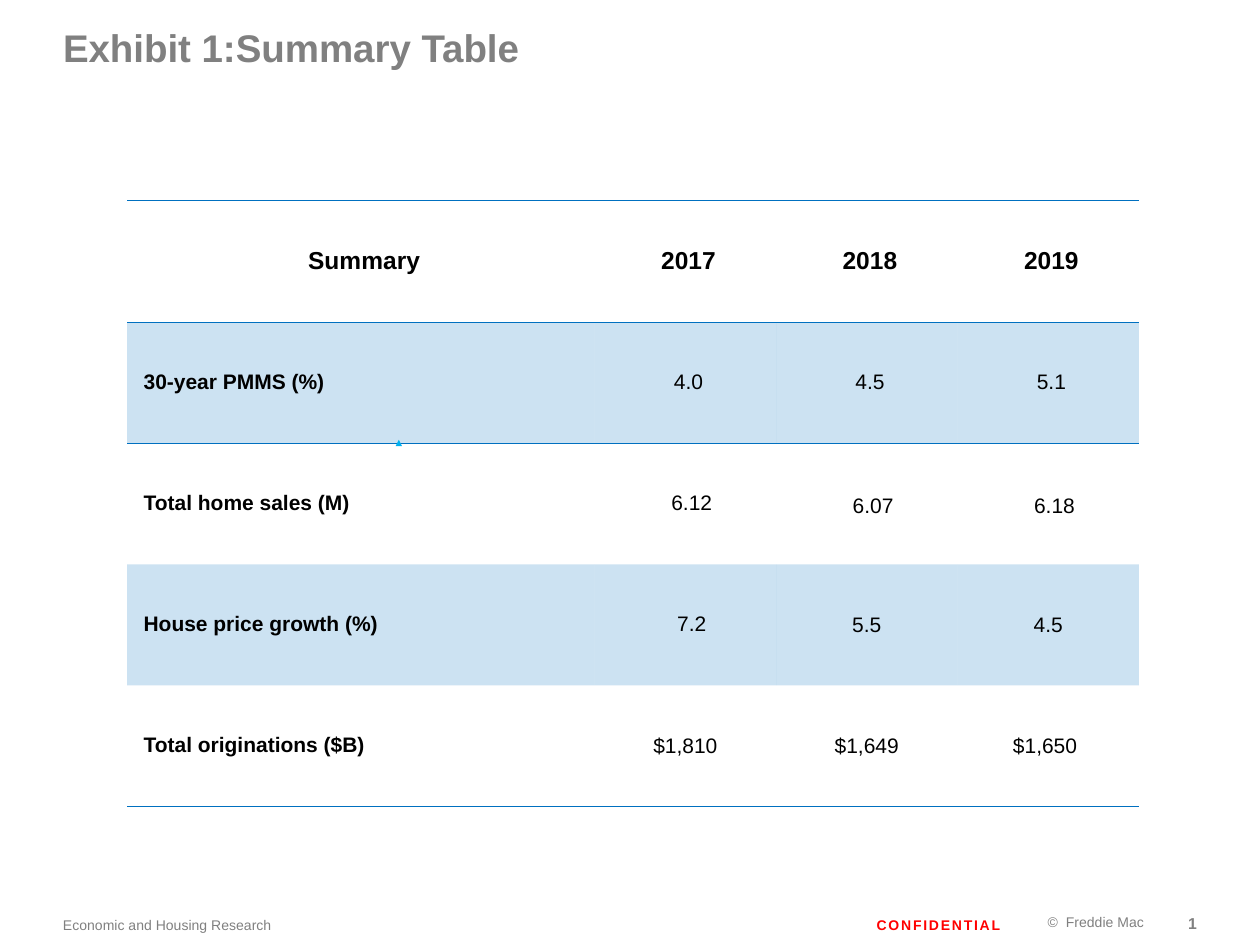
from lxml import etree
from pptx import Presentation
from pptx import util as u
from pptx.dml.color import RGBColor
from pptx.enum import shapes, text
from pptx.oxml import ns

# Content
TITLE = "Exhibit 1:Summary Table"
HEAD = ["Summary", "2017", "2018", "2019"]
ROWS = [
    ["30-year PMMS (%)", "4.0", "4.5", "5.1"],
    ["Total home sales (M)", "6.12", "6.07", "6.18"],
    ["House price growth (%)", "7.2", "5.5", "4.5"],
    ["Total originations ($B)", "$1,810", "$1,649", "$1,650"],
]
THEME = dict(
    font="Arial", grey="808080", red="FF0000", ink="000000",
    blue="0070C0", mark="00B0F0", tint=20,
    title=22, head=14, body=12, foot=8, page=9, rule=1,
)
LEFT, MID, RIGHT = text.PP_ALIGN.LEFT, text.PP_ALIGN.CENTER, text.PP_ALIGN.RIGHT
FOOT = [
    ("©  Freddie Mac", (7.56, 7.16, 1.52, 0.32), dict(align=RIGHT)),
    ("CONFIDENTIAL", (4.74, 7.18, 3.2, 0.31),
     dict(align=RIGHT, color="red", bold=True, track=1, lines=1.05)),
    ("Economic and Housing Research", (0.5, 7.18, 4.47, 0.32), {}),
    ("1", (9.17, 7.17, 0.33, 0.31), dict(align=RIGHT, size="page", bold=True)),
]

# Layout
WIDE, HIGH = 10, 7.5
GRID = (1.01, 1.59, 8.02, 4.8)
COLS = [3.71, 1.44, 1.44, 1.44]
TALL = [0.97] + [0.96] * len(ROWS)
ROOMY, TIGHT = (0.08, 0.02, 0.08, 0.06), (0.01, 0.01, 0.01, 0)
# Cells (row, column) that depart from the roomy, 0.05 indent format
SNUG = {(2, 2), (2, 3), (3, 2), (3, 3), (4, 1), (4, 2), (4, 3)}
DEEP = {(2, 1), (2, 2), (2, 3), (3, 1)}


def tone(key):
    return RGBColor.from_string(THEME[key])


def write(frame, words, size="foot", color="grey", bold=False, align=LEFT,
          lines=None, indent=0, track=0):
    para = frame.paragraphs[0]
    para.alignment = align
    if lines:
        para.line_spacing = lines
    if indent:
        para._p.get_or_add_pPr().set("marL", str(u.Inches(indent)))
    run = para.add_run()
    run.text = words
    font = run.font
    font.name, font.size, font.bold = THEME["font"], u.Pt(THEME[size]), bold
    font.color.rgb = tone(color)
    if track:
        font._element.set("spc", str(track * 100))


def label(slide, words, box, top=0, anchor=text.MSO_ANCHOR.MIDDLE, **style):
    frame = slide.shapes.add_textbox(*map(u.Inches, box)).text_frame
    frame.word_wrap = True
    frame.vertical_anchor = anchor
    frame.margin_left = frame.margin_right = frame.margin_bottom = 0
    frame.margin_top = u.Inches(top)
    write(frame, words, **style)


def rule(cell, sides):
    """Draw a line on the given sides, T before B."""
    props = cell._tc.get_or_add_tcPr()
    for spot, side in enumerate(sides):
        line = etree.Element(ns.qn("a:ln" + side), w=str(u.Pt(THEME["rule"])))
        fill = etree.SubElement(line, ns.qn("a:solidFill"))
        etree.SubElement(fill, ns.qn("a:srgbClr"), val=THEME["blue"])
        props.insert(spot, line)


def shade(cell):
    cell.fill.solid()
    cell.fill.fore_color.rgb = tone("blue")
    hue = cell._tc.tcPr.find(".//" + ns.qn("a:srgbClr"))
    etree.SubElement(hue, ns.qn("a:alpha"), val=str(THEME["tint"] * 1000))


def fill_cell(cell, row, col, words):
    snug = (row, col) in SNUG
    pad = list(TIGHT if snug else ROOMY)
    if (row, col) == (4, 3):
        pad[2] = 0.06
    cell.margin_left, cell.margin_top, cell.margin_right, cell.margin_bottom = map(u.Inches, pad)
    cell.vertical_anchor = text.MSO_ANCHOR.MIDDLE
    deep = (row, col) in DEEP
    plain = snug and not deep
    write(cell.text_frame, words, color="ink",
          size="body" if row else "head",
          bold=row == 0 or col == 0,
          align=LEFT if row and col == 0 else MID,
          lines=None if plain else 1.15,
          indent=0.1 if deep else 0 if plain else 0.05)
    if row % 2:
        shade(cell)
    else:
        cell.fill.background()
    rule(cell, {0: "TB", 1: "T", len(ROWS): "B"}.get(row, ""))


def add_grid(slide):
    data = [HEAD] + ROWS
    grid = slide.shapes.add_table(len(data), len(HEAD), *map(u.Inches, GRID)).table
    grid.first_row = grid.horz_banding = False
    # The "No Style, No Grid" table style
    grid._tbl.tblPr[0].text = "{2D5ABB26-0587-4C30-8999-92F81FD0307C}"
    for col, width in zip(grid.columns, COLS):
        col.width = u.Inches(width)
    for row, tall in zip(grid.rows, TALL):
        row.height = u.Inches(tall)
    for row, line in enumerate(data):
        for col, words in enumerate(line):
            fill_cell(grid.cell(row, col), row, col, words)


def main():
    deck = Presentation()
    deck.slide_width, deck.slide_height = u.Inches(WIDE), u.Inches(HIGH)
    slide = deck.slides.add_slide(deck.slide_layouts[6])
    for words, box, style in FOOT:
        label(slide, words, box, **style)
    label(slide, TITLE, (0.5, 0, 6.75, 1.08), top=0.19,
          anchor=text.MSO_ANCHOR.TOP, size="title", bold=True)
    add_grid(slide)
    mark = slide.shapes.add_shape(shapes.MSO_SHAPE.ISOSCELES_TRIANGLE,
                                  *map(u.Inches, (3.14, 3.49, 0.05, 0.05)))
    mark.shadow.inherit = False
    mark.fill.solid()
    mark.fill.fore_color.rgb = tone("mark")
    mark.line.fill.background()
    deck.save("out.pptx")


if __name__ == "__main__":
    main()
